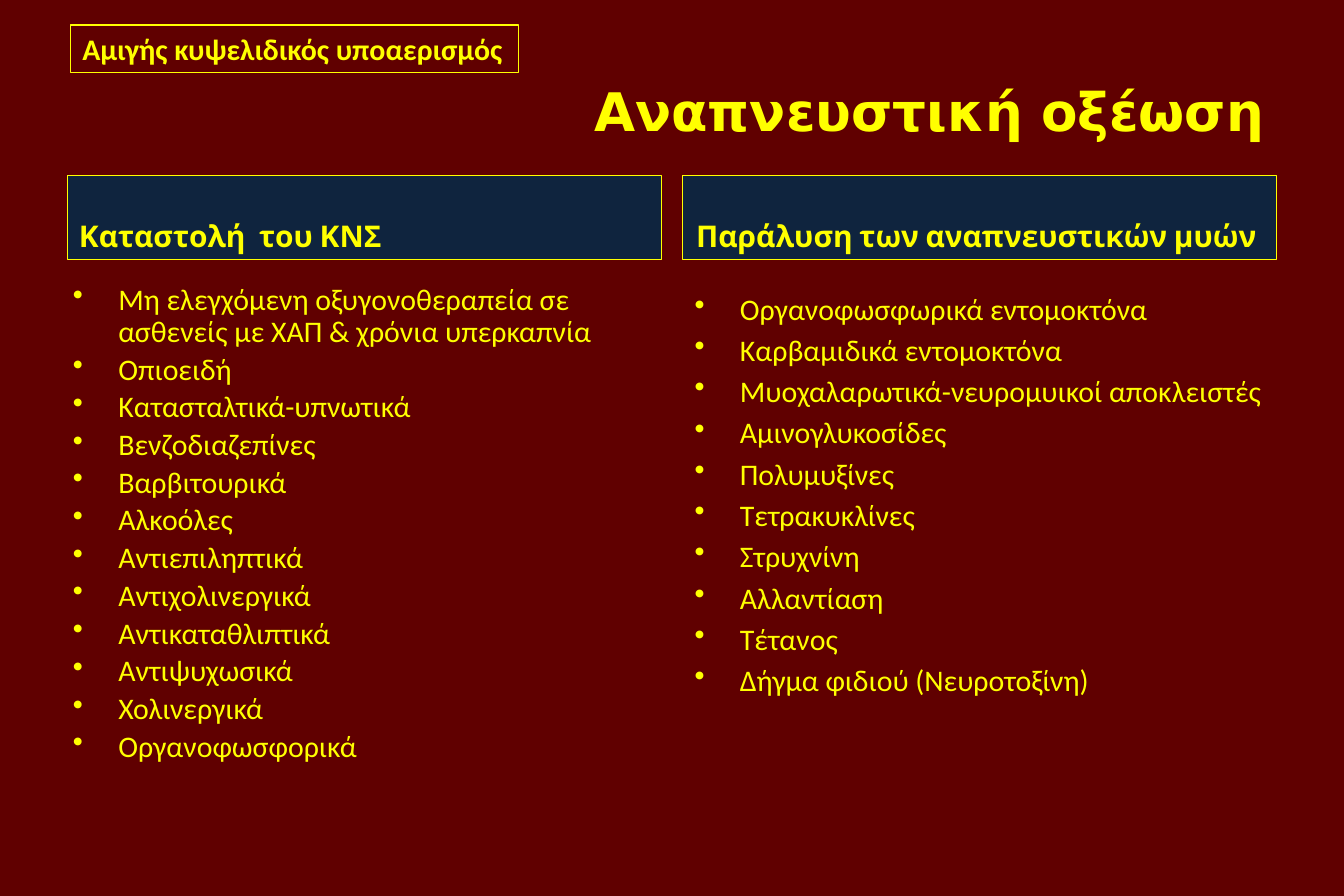
"""Build the slide on respiratory acidosis and its two groups of causes."""
from dataclasses import dataclass

from lxml.etree import SubElement
from pptx import Presentation
from pptx.dml.color import RGBColor
from pptx.enum.shapes import MSO_SHAPE
from pptx.enum.text import MSO_ANCHOR, PP_ALIGN
from pptx.oxml.ns import qn
from pptx.util import Inches, Pt

TITLE = "Αναπνευστική οξέωση"
TAG = "Αμιγής κυψελιδικός υποαερισμός"
COLUMNS = [
    {
        "heading": "Καταστολή  του ΚΝΣ",
        "align": PP_ALIGN.LEFT,
        "causes": [
            "Μη ελεγχόμενη οξυγονοθεραπεία σε ασθενείς με ΧΑΠ & χρόνια υπερκαπνία",
            "Οπιοειδή",
            "Κατασταλτικά-υπνωτικά",
            "Βενζοδιαζεπίνες",
            "Βαρβιτουρικά",
            "Αλκοόλες",
            "Αντιεπιληπτικά",
            "Αντιχολινεργικά",
            "Αντικαταθλιπτικά",
            "Αντιψυχωσικά",
            "Χολινεργικά",
            "Οργανοφωσφορικά",
        ],
        "line_spacing": 0.9,
        "list_shift": (-0.05, 0),
        "list_extra": 0,
    },
    {
        "heading": "Παράλυση των αναπνευστικών μυών ",
        "align": PP_ALIGN.CENTER,
        "causes": [
            "Οργανοφωσφωρικά εντομοκτόνα",
            "Καρβαμιδικά εντομοκτόνα",
            "Μυοχαλαρωτικά-νευρομυικοί αποκλειστές",
            "Αμινογλυκοσίδες",
            "Πολυμυξίνες",
            "Τετρακυκλίνες",
            "Στρυχνίνη",
            "Αλλαντίαση",
            "Τέτανος",
            "Δήγμα φιδιού (Νευροτοξίνη)",
        ],
        "line_spacing": 1.0,
        "list_shift": (0, 0.05),
        "list_extra": 0.06,
    },
]


@dataclass(frozen=True)
class Theme:
    """Colours, fonts and type sizes of the slide."""

    background: RGBColor = RGBColor(0x60, 0x00, 0x00)
    panel: RGBColor = RGBColor(0x0F, 0x24, 0x3E)
    accent: RGBColor = RGBColor(0xFF, 0xFF, 0x00)
    title_font: str = "DejaVu Sans"
    heading_font: str = "Cabin"
    body_font: str = "Calibri"
    title_size: Pt = Pt(32)
    body_size: Pt = Pt(18)
    outline: Pt = Pt(0.75)
    space_before: Pt = Pt(3.3)


THEME = Theme()
WIDTH, HEIGHT = 11.25, 7.5
MARGIN = WIDTH * 0.05
CONTENT = WIDTH - 2 * MARGIN
GUTTER = 0.18
COLUMN = (CONTENT - GUTTER) / 2
HEADING_TOP, HEADING_HEIGHT = 1.47, 0.7
LIST_TOP, LIST_HEIGHT = 2.33, 4.32
INDENT = 0.38


def add_text(slide, box, lines, font, size=THEME.body_size, bold=False,
             align=PP_ALIGN.LEFT, anchor=MSO_ANCHOR.TOP, outlined=False, fill=None):
    """Add a rectangle or text box with one paragraph per line."""
    place = [Inches(length) for length in box]
    if outlined:
        shape = slide.shapes.add_shape(MSO_SHAPE.RECTANGLE, *place)
        shape.shadow.inherit = False
        shape.line.color.rgb = THEME.accent
        shape.line.width = THEME.outline
        if fill is None:
            shape.fill.background()
        else:
            shape.fill.solid()
            shape.fill.fore_color.rgb = fill
    else:
        shape = slide.shapes.add_textbox(*place)
    frame = shape.text_frame
    frame.word_wrap = True
    frame.vertical_anchor = anchor
    frame.text = "\n".join(lines)
    for paragraph in frame.paragraphs:
        paragraph.alignment = align
        paragraph.font.name = font
        paragraph.font.size = size
        paragraph.font.bold = bold
        paragraph.font.color.rgb = THEME.accent
    return frame


def add_bullets(frame, line_spacing):
    """Give every paragraph a bullet with a hanging indent."""
    for paragraph in frame.paragraphs:
        paragraph.line_spacing = line_spacing
        paragraph.space_before = THEME.space_before
        properties = paragraph._p.get_or_add_pPr()
        properties.set("marL", str(Inches(INDENT)))
        properties.set("indent", str(-Inches(INDENT)))
        bullet = SubElement(properties, qn("a:buChar"))
        bullet.set("char", "•")
        properties.insert_element_before(bullet, "a:tabLst", "a:defRPr", "a:extLst")


def add_column(slide, index, column):
    """Add a heading panel and the list of causes under it."""
    left = MARGIN + index * (COLUMN + GUTTER)
    add_text(slide, (left, HEADING_TOP, COLUMN, HEADING_HEIGHT), [column["heading"]],
             THEME.heading_font, bold=True, align=column["align"],
             anchor=MSO_ANCHOR.BOTTOM, outlined=True, fill=THEME.panel)
    shift_x, shift_y = column["list_shift"]
    box = (left + shift_x, LIST_TOP + shift_y, COLUMN + column["list_extra"], LIST_HEIGHT)
    causes = add_text(slide, box, column["causes"], THEME.body_font)
    add_bullets(causes, column["line_spacing"])


def main():
    """Compose and save the slide."""
    presentation = Presentation()
    presentation.slide_width = Inches(WIDTH)
    presentation.slide_height = Inches(HEIGHT)
    slide = presentation.slides.add_slide(presentation.slide_layouts[6])
    slide.background.fill.solid()
    slide.background.fill.fore_color.rgb = THEME.background

    add_text(slide, (MARGIN, HEIGHT * 0.04, CONTENT, HEIGHT / 6), [TITLE],
             THEME.title_font, size=THEME.title_size, bold=True,
             align=PP_ALIGN.RIGHT, anchor=MSO_ANCHOR.MIDDLE)
    for index, column in enumerate(COLUMNS):
        add_column(slide, index, column)
    tag = add_text(slide, (0.59, 0.21, WIDTH / 3, 0.4), [TAG], THEME.body_font,
                   bold=True, outlined=True)
    tag.word_wrap = False
    presentation.save("out.pptx")


if __name__ == "__main__":
    main()
